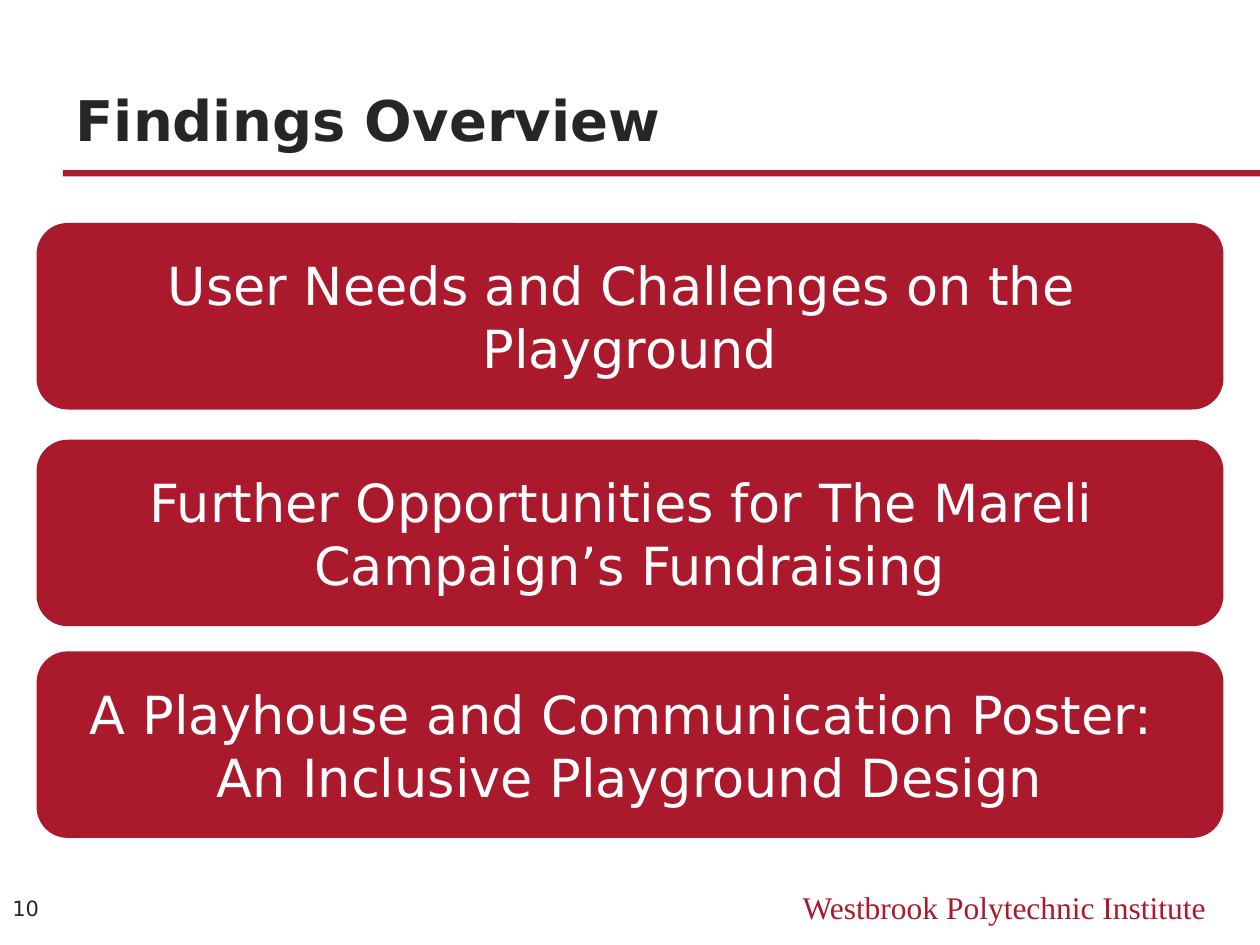
from pptx import Presentation
from pptx.dml.color import RGBColor
from pptx.enum.shapes import MSO_SHAPE
from pptx.enum.text import MSO_ANCHOR, PP_ALIGN
from pptx.util import Inches, Pt

CRIMSON = RGBColor(0xAB, 0x19, 0x2D)
CHARCOAL = RGBColor(0x26, 0x26, 0x26)
WHITE = RGBColor(0xFF, 0xFF, 0xFF)
SANS = "DejaVu Sans"
SERIF = "Times New Roman"

MARGIN = 0.5
CARD_LEFT, CARD_HEIGHT = 0.29, 1.48
FINDINGS = [
    (1.77, ["User Needs and Challenges on the ", "Playground"]),
    (3.49, ["Further Opportunities for The Mareli ", "Campaign’s Fundraising"]),
    (5.17, ["A Playhouse and Communication Poster: ", "An Inclusive Playground Design"]),
]


def write_lines(shape, lines, size, color, font=SANS, align=PP_ALIGN.LEFT,
                anchor=MSO_ANCHOR.MIDDLE, bold=False, wrap=True):
    frame = shape.text_frame
    frame.word_wrap = wrap
    frame.vertical_anchor = anchor
    for index, line in enumerate(lines):
        para = frame.paragraphs[0] if index == 0 else frame.add_paragraph()
        para.alignment = align
        span = para.add_run()
        span.text = line
        span.font.name = font
        span.font.size = Pt(size)
        span.font.bold = bold
        span.font.color.rgb = color


def add_block(slide, kind, left, top, width, height):
    """Add a crimson shape without outline or shadow; lengths in inches."""
    block = slide.shapes.add_shape(
        kind, Inches(left), Inches(top), Inches(width), Inches(height))
    block.shadow.inherit = False
    block.fill.solid()
    block.fill.fore_color.rgb = CRIMSON
    block.line.fill.background()
    return block


deck = Presentation()
deck.slide_width, deck.slide_height = Inches(10), Inches(7.5)
page_width = deck.slide_width.inches
slide = deck.slides.add_slide(deck.slide_layouts.get_by_name("Title Only"))

# Heading and rule
title = slide.shapes.title
title.left, title.top = Inches(MARGIN), Inches(0.38)
title.width, title.height = Inches(page_width - 2 * MARGIN), Inches(0.88)
write_lines(title, ["Findings Overview"], 32, CHARCOAL,
            anchor=MSO_ANCHOR.BOTTOM, bold=True)
add_block(slide, MSO_SHAPE.RECTANGLE, MARGIN, 1.35, page_width - MARGIN, 0.05)

# Findings
for top, lines in FINDINGS:
    card = add_block(slide, MSO_SHAPE.ROUNDED_RECTANGLE, CARD_LEFT, top,
                     page_width - 2 * CARD_LEFT, CARD_HEIGHT)
    write_lines(card, lines, 30, WHITE, align=PP_ALIGN.CENTER, wrap=False)

# Footer
page_number = slide.shapes.add_textbox(0, Inches(6.99), Inches(MARGIN), Inches(0.43))
write_lines(page_number, ["10"], 12, CHARCOAL)
institute = slide.shapes.add_textbox(Inches(6), Inches(7), Inches(3.67), Inches(0.4))
write_lines(institute, ["Westbrook Polytechnic Institute"], 18, CRIMSON, font=SERIF,
            align=PP_ALIGN.RIGHT, anchor=MSO_ANCHOR.TOP)

deck.save("out.pptx")
